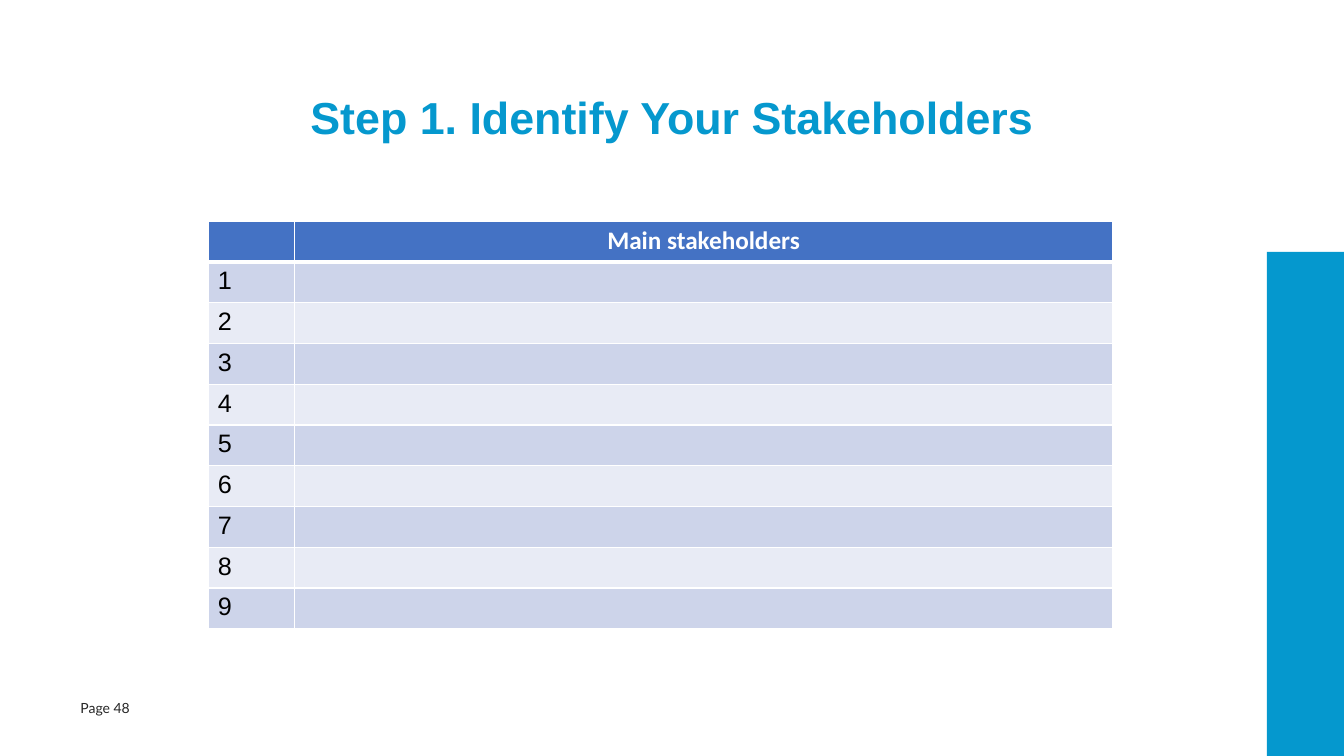
from dataclasses import dataclass

from lxml.etree import SubElement
from pptx import Presentation
from pptx.dml.color import RGBColor
from pptx.enum.shapes import MSO_SHAPE
from pptx.enum.text import MSO_ANCHOR, PP_ALIGN
from pptx.oxml.ns import qn
from pptx.slide import Slide
from pptx.table import _Cell
from pptx.text.text import TextFrame
from pptx.util import Pt

CYAN = RGBColor(0x05, 0x98, 0xCE)
HEADER_BLUE = RGBColor(0x44, 0x72, 0xC4)
BAND_DARK = RGBColor(0xCD, 0xD4, 0xEA)
BAND_LIGHT = RGBColor(0xE8, 0xEB, 0xF5)
WHITE = RGBColor(0xFF, 0xFF, 0xFF)
BLACK = RGBColor(0, 0, 0)
CHARCOAL = RGBColor(0x26, 0x26, 0x26)

ROW_HEIGHT = 29.16
COLUMN_WIDTHS = (61.7, 584.9)
STAKEHOLDER_COUNT = 9


@dataclass(frozen=True)
class TableRow:
    label: str
    heading: str
    fill: RGBColor
    bottom_line: float = 1


def write_text(tf: TextFrame, text: str, *, size: float, font: str,
               color: RGBColor, bold: bool = False,
               align: PP_ALIGN = PP_ALIGN.LEFT, spacing: float = 1.0) -> None:
    p = tf.paragraphs[0]
    p.alignment = align
    p.line_spacing = spacing
    r = p.add_run()
    r.text = text
    r.font.size = Pt(size)
    r.font.name = font
    r.font.bold = bold
    r.font.color.rgb = color


def draw_borders(cell: _Cell, bottom_line: float) -> None:
    widths = {"a:lnL": 1, "a:lnR": 1, "a:lnT": 1, "a:lnB": bottom_line}
    properties = cell._tc.get_or_add_tcPr()
    for tag, width in widths.items():
        line = SubElement(properties, qn(tag), w=str(Pt(width)))
        fill = SubElement(line, qn("a:solidFill"))
        SubElement(fill, qn("a:srgbClr"), val=str(WHITE))


def add_title(s: Slide, text: str) -> None:
    title = s.shapes.title
    title.left, title.top = Pt(118), Pt(61.2)
    title.width, title.height = Pt(724.3), Pt(49)
    title.text_frame.vertical_anchor = MSO_ANCHOR.MIDDLE
    write_text(title.text_frame, text, size=32, font="Arial", color=CYAN,
               bold=True, align=PP_ALIGN.CENTER, spacing=0.9)


def add_side_bar(s: Slide) -> None:
    bar = s.shapes.add_shape(MSO_SHAPE.RECTANGLE, Pt(905), Pt(180), Pt(55), Pt(360))
    bar.shadow.inherit = False
    bar.fill.solid()
    bar.fill.fore_color.rgb = CYAN
    bar.line.fill.background()


def add_page_number(s: Slide, text: str) -> None:
    box = s.shapes.add_textbox(Pt(50.4), Pt(496), Pt(240), Pt(19.4))
    tf = box.text_frame
    tf.word_wrap = True
    tf.vertical_anchor = MSO_ANCHOR.MIDDLE
    write_text(tf, text, size=10, font="Lato", color=CHARCOAL)


def add_stakeholder_table(s: Slide, rows: list[TableRow]) -> None:
    table = s.shapes.add_table(len(rows), len(COLUMN_WIDTHS), Pt(148.5), Pt(157.8),
                               Pt(sum(COLUMN_WIDTHS)), Pt(ROW_HEIGHT * len(rows))).table
    for column, width in zip(table.columns, COLUMN_WIDTHS):
        column.width = Pt(width)
    for table_row, row in zip(table.rows, rows):
        table_row.height = Pt(ROW_HEIGHT)
        number, name = table_row.cells
        for cell in (number, name):
            draw_borders(cell, row.bottom_line)
            cell.fill.solid()
            cell.fill.fore_color.rgb = row.fill
        if row.label:
            write_text(number.text_frame, row.label, size=18, font="Arial", color=BLACK)
        if row.heading:
            write_text(name.text_frame, row.heading, size=18, font="Calibri",
                       color=WHITE, bold=True, align=PP_ALIGN.CENTER)


def main() -> None:
    prs = Presentation()
    prs.slide_width, prs.slide_height = Pt(960), Pt(540)
    s = prs.slides.add_slide(prs.slide_layouts[5])
    rows = [TableRow("", "Main stakeholders", HEADER_BLUE, 3)]
    rows += [TableRow(str(i), "", BAND_DARK if i % 2 else BAND_LIGHT)
             for i in range(1, STAKEHOLDER_COUNT + 1)]
    add_side_bar(s)
    add_page_number(s, "Page 48")
    add_title(s, "Step 1. Identify Your Stakeholders")
    add_stakeholder_table(s, rows)
    prs.save("out.pptx")


if __name__ == "__main__":
    main()
